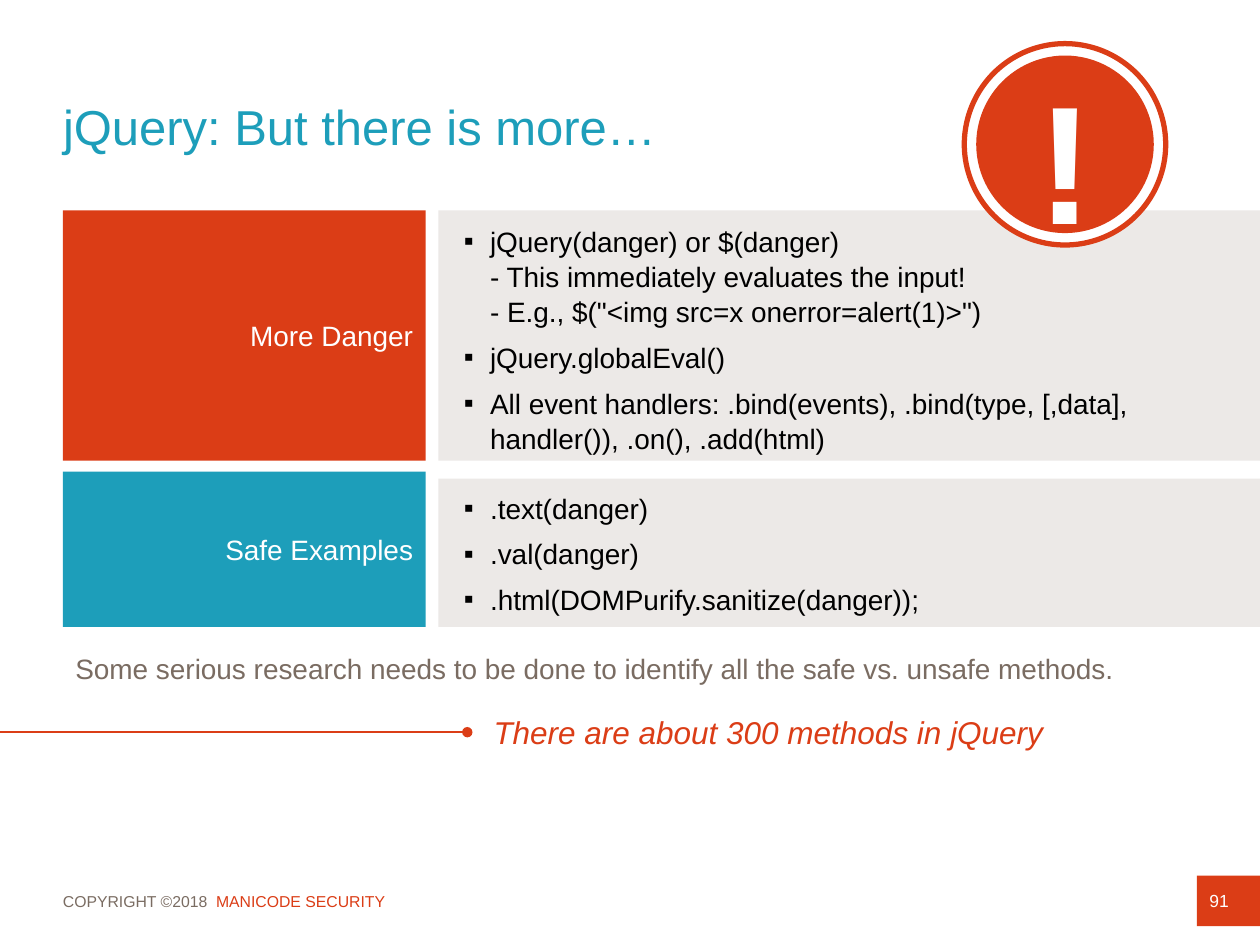
from lxml.etree import SubElement as Sub
from pptx import Presentation
from pptx.dml.color import RGBColor as RGB
from pptx.enum.shapes import MSO_CONNECTOR as LINK, MSO_SHAPE as FORM
from pptx.enum.text import MSO_ANCHOR as ANCHOR, MSO_AUTO_SIZE as FIT, PP_ALIGN as ALIGN
from pptx.oxml.ns import qn
from pptx.util import Cm, Pt

RED, TEAL, GREY, TAUPE = "DB3D16", "1D9EBA", "ECE9E7", "7A6C62"
WHITE, BLACK = "FFFFFF", "000000"
PAD = (0.25, 0.13, 0.25, 0.13)
NONE = (0, 0, 0, 0)


def tint(code):
    return RGB.from_string(code)


class Deck:
    font = "Arial"

    def __init__(self, wide, high):
        self.file = Presentation()
        self.file.slide_width, self.file.slide_height = Cm(wide), Cm(high)
        self.slide = self.file.slides.add_slide(self.file.slide_layouts[5])
        self.shapes = self.slide.shapes

    def frame(self, shape, pad, anchor):
        """Set up the text area of a shape and return its first paragraph."""
        area = shape.text_frame
        area.auto_size = FIT.NONE
        area.word_wrap = True
        area.vertical_anchor = anchor
        (area.margin_left, area.margin_top,
         area.margin_right, area.margin_bottom) = (Cm(side) for side in pad)
        return area.paragraphs[0]

    def run(self, para, words, size, color, bold=False, slant=False):
        run = para.add_run()
        run.text = words
        font = run.font
        font.name, font.size = self.font, Pt(size)
        font.bold, font.italic = bold, slant
        font.color.rgb = tint(color)

    def title(self, box, words):
        shape = self.shapes.title
        shape.left, shape.top, shape.width, shape.height = map(Cm, box)
        para = self.frame(shape, NONE, ANCHOR.MIDDLE)
        para.alignment = ALIGN.LEFT
        self.run(para, words, 28, TEAL)

    def text(self, box, pad=PAD, anchor=ANCHOR.TOP, align=ALIGN.LEFT):
        shape = self.shapes.add_textbox(*map(Cm, box))
        para = self.frame(shape, pad, anchor)
        para.alignment = align
        return para

    def shape(self, form, box, fill, line=None):
        shape = self.shapes.add_shape(form, *map(Cm, box))
        shape.shadow.inherit = False
        shape.fill.solid()
        shape.fill.fore_color.rgb = tint(fill)
        if line:
            shape.line.color.rgb = tint(line)
            shape.line.width = Pt(3)
        else:
            shape.line.fill.background()
        return shape

    def label(self, box, fill, words, size, align, pad=PAD):
        shape = self.shape(FORM.RECTANGLE, box, fill)
        para = self.frame(shape, pad, ANCHOR.MIDDLE)
        para.alignment = align
        self.run(para, words, size, WHITE)

    def panel(self, box, items, anchor):
        """Grey box with bullets; each item is a list of lines."""
        shape = self.shape(FORM.RECTANGLE, box, GREY)
        para = self.frame(shape, (0.51, 0.25, 1.27, 0.25), anchor)
        for index, lines in enumerate(items):
            if index:
                para = shape.text_frame.add_paragraph()
                para.space_before = Pt(6)
            para.alignment = ALIGN.LEFT
            para.line_spacing = 1.05
            self.bullet(para)
            for row, words in enumerate(lines):
                if row:
                    para.add_line_break()
                self.run(para, words, 16, BLACK)

    def bullet(self, para):
        props = para._p.get_or_add_pPr()
        props.set("marL", str(Cm(0.53)))
        props.set("indent", str(-Cm(0.53)))
        Sub(props, qn("a:buFont")).set("typeface", self.font)
        Sub(props, qn("a:buChar")).set("char", "▪")

    def line(self, start, end, color):
        link = self.shapes.add_connector(LINK.STRAIGHT, *map(Cm, start + end))
        link.line.color.rgb = tint(color)
        link.line.width = Pt(1)
        Sub(link.line._get_or_add_ln(), qn("a:tailEnd")).set("type", "oval")
        Sub(link._element.spPr, qn("a:effectLst"))


def main():
    deck = Deck(25.4, 19.05)

    # Footer and page number
    foot = deck.text((1.27, 17.65, 22.86, 1.02), NONE, ANCHOR.MIDDLE)
    deck.run(foot, "COPYRIGHT ©2018  ", 9, TAUPE)
    deck.run(foot, "MANICODE SECURITY", 9, RED)
    deck.label((24.13, 17.65, 1.27, 1.02), RED, "91", 10, ALIGN.LEFT)

    # Title
    deck.title((1.27, 1.27, 22.86, 2.54), "jQuery: But there is more…")

    # Rows: label on the left, bullets on the right
    danger = [
        ["jQuery(danger) or $(danger)",
         "- This immediately evaluates the input!",
         "- E.g., $(\"<img src=x onerror=alert(1)>\")"],
        ["jQuery.globalEval()"],
        ["All event handlers: .bind(events), .bind(type, [,data], "
         "handler()), .on(), .add(html)"],
    ]
    safe = [[".text(danger)"], [".val(danger)"],
            [".html(DOMPurify.sanitize(danger));"]]
    rows = [
        ("More Danger", RED, 4.24, 4.24, 9.29, danger, ANCHOR.TOP),
        ("Safe Examples", TEAL, 9.51, 9.65, 12.64, safe, ANCHOR.MIDDLE),
    ]
    for name, fill, top, start, end, items, anchor in rows:
        deck.label((1.27, top, 7.31, end - top), fill, name, 16,
                   ALIGN.RIGHT, (0.76, 0.13, 0.25, 0.13))
        deck.panel((8.84, start, 16.56, end - start), items, anchor)

    # Warning badge
    mid, level = 21.47, 2.91
    for size, fill, line in ((4.06, WHITE, RED), (3.58, RED, None)):
        deck.shape(FORM.OVAL, (mid - size / 2, level - size / 2, size, size),
                   fill, line)
    mark = deck.text((mid - 0.66, 0.84, 1.32, 4.11), (0, 0.3, 0, 0),
                     align=ALIGN.CENTER)
    deck.run(mark, "!", 96, WHITE, bold=True)

    # Callout with its pointer
    call = deck.text((9.7, 14.15, 14.43, 1.09))
    call.line_spacing = Pt(24)
    deck.run(call, "There are about 300 methods in jQuery", 18, RED,
             slant=True)
    deck.line((0, 14.76), (9.42, 14.76), RED)

    # Closing remark
    note = deck.text((1.27, 13, 22.86, 0.94))
    deck.run(note, "Some serious research needs to be done to identify "
             "all the safe vs. unsafe methods.", 16, TAUPE)

    deck.file.save("out.pptx")


if __name__ == "__main__":
    main()
